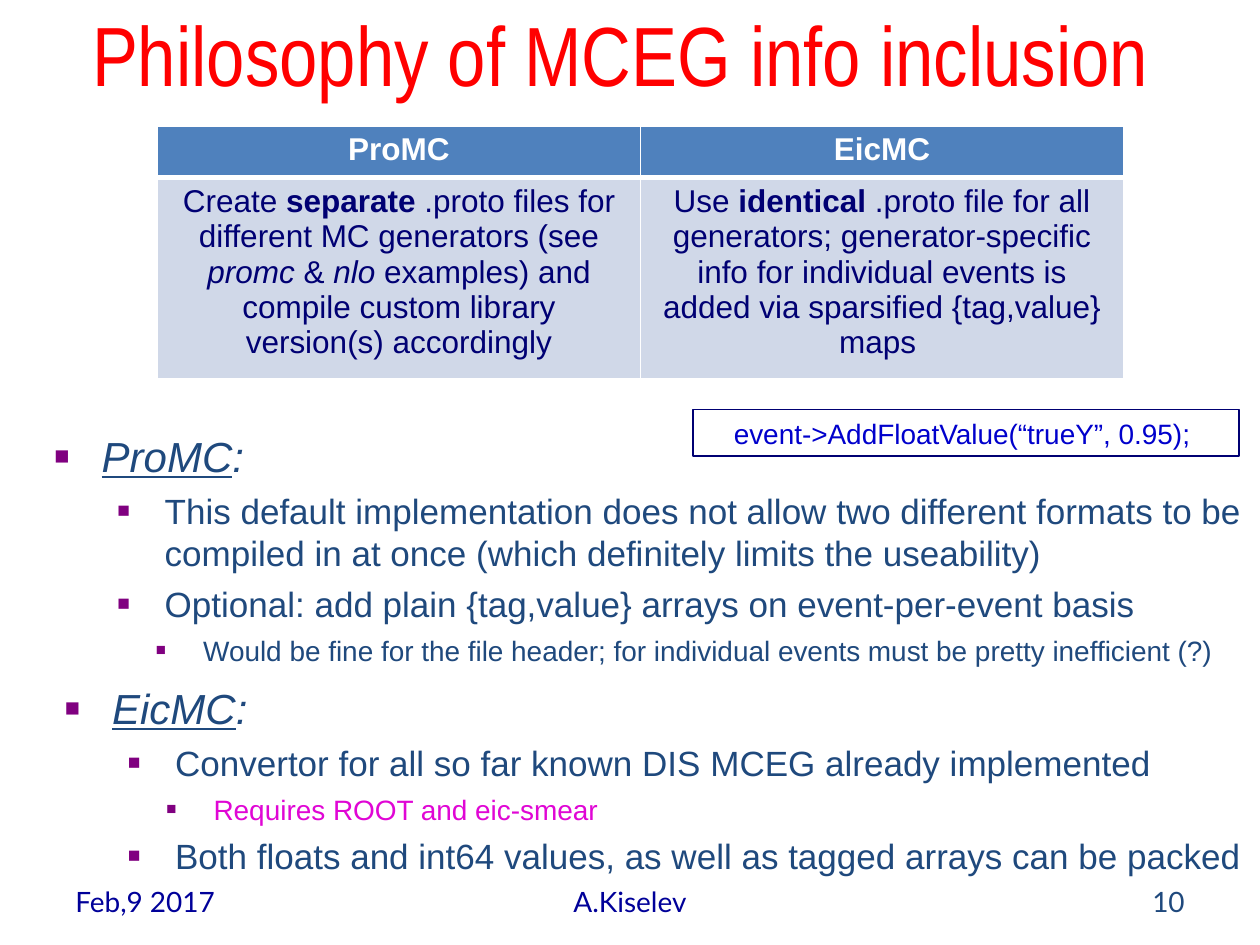
import pptx
import pptx.util
import pptx.dml.color
import pptx.enum.shapes
import pptx.enum.text
import pptx.oxml
import pptx.oxml.ns
from dataclasses import dataclass

Pt = pptx.util.Pt
ALIGN = pptx.enum.text.PP_ALIGN
ANCHOR = pptx.enum.text.MSO_ANCHOR


@dataclass(frozen=True)
class Theme:
    body_font: str = "Arial"
    title_font: str = "Arial Narrow"
    footer_font: str = "Lato"
    title: str = "FF0000"
    body: str = "1F497D"
    remark: str = "E006D5"
    bullet: str = "800080"
    footer: str = "000099"
    code: str = "0000CC"
    navy: str = "000073"
    white: str = "FFFFFF"
    header_fill: str = "4F81BD"
    cell_fill: str = "D0D8E8"
    title_size: int = 48
    table_size: int = 18
    small_size: int = 16
    level_sizes: tuple = (24, 20, 16)


theme = Theme()

# Content: a span is (text, style letters), with b bold, i italic, u underlined
TITLE = "Philosophy of MCEG info inclusion "
CODE = "event->AddFloatValue(“trueY”, 0.95); "
TABLE = [
    [[("ProMC", "b")], [("EicMC", "b")]],
    [
        [("Create ", ""), ("separate", "b"),
         (" .proto files for different MC generators (see ", ""),
         ("promc", "i"), (" & ", ""), ("nlo", "i"),
         (" examples) and compile custom library version(s) accordingly", "")],
        [("Use ", ""), ("identical", "b"),
         (" .proto file for all generators; generator-specific info for "
          "individual events is added via sparsified {tag,value} maps ", "")],
    ],
]
# Each list: left, top, width, height, then (level, colour, spans)
LISTS = [
    ((24, 240, 696, 138), [
        (0, theme.body, [("ProMC", "iu"), (":", "i")]),
        (1, theme.body, [("This default implementation does not allow two different formats "
                          "to be compiled in at once (which definitely limits the useability)", "")]),
        (1, theme.body, [("Optional: add plain {tag,value} arrays on event-per-event basis", "")]),
        (2, theme.body, [("Would be fine for the file header; for individual events must be "
                          "pretty inefficient (?)", "")]),
    ]),
    ((30, 384, 690, 126), [
        (0, theme.body, [("EicMC", "iu"), (":", "i")]),
        (1, theme.body, [("Convertor for all so far known DIS MCEG already implemented", "")]),
        (2, theme.remark, [("Requires ROOT and eic-smear", "")]),
        (1, theme.body, [("Both floats and int64 values, as well as tagged arrays can be packed", "")]),
    ]),
]
FOOTER = [
    ("Feb,9 2017", 36, 168, ALIGN.LEFT, theme.footer),
    ("A.Kiselev", 246, 228, ALIGN.CENTER, theme.footer),
    ("10", 516, 168, ALIGN.RIGHT, theme.body),
]
LEVEL_INDENTS = (27, 63, 85)
HANGING = 27
LIST_GAP = 5


def color(value):
    return pptx.dml.color.RGBColor.from_string(value)


def add_spans(para, spans, size, ink, font=theme.body_font):
    for text, style in spans:
        span = para.add_run()
        span.text = text
        span.font.name = font
        span.font.size = Pt(size)
        span.font.color.rgb = color(ink)
        span.font.bold = "b" in style
        span.font.italic = "i" in style
        span.font.underline = "u" in style


def add_box(page, frame, anchor=ANCHOR.TOP):
    box = page.shapes.add_textbox(*map(Pt, frame))
    box.text_frame.word_wrap = True
    box.text_frame.vertical_anchor = anchor
    return box.text_frame


def add_line(page, frame, text, size, ink, font, align):
    para = add_box(page, frame, ANCHOR.MIDDLE).paragraphs[0]
    para.alignment = align
    add_spans(para, [(text, "")], size, ink, font)


def add_bullet(para, level):
    props = para._p.get_or_add_pPr()
    props.set("marL", str(Pt(LEVEL_INDENTS[level])))
    props.set("indent", str(-Pt(HANGING)))
    names = pptx.oxml.ns.nsdecls("a")
    for xml in (
        f'<a:buClr {names}><a:srgbClr val="{theme.bullet}"/></a:buClr>',
        f'<a:buSzPct {names} val="60000"/>',
        f'<a:buFont {names} typeface="{theme.body_font}"/>',
        f'<a:buChar {names} char="■"/>',
    ):
        props.append(pptx.oxml.parse_xml(xml))


def add_list(page, frame, items):
    body = add_box(page, frame)
    body.margin_top = Pt(6)
    for number, (level, ink, spans) in enumerate(items):
        para = body.add_paragraph() if number else body.paragraphs[0]
        add_bullet(para, level)
        if number:
            para.space_before = Pt(LIST_GAP)
        add_spans(para, spans, theme.level_sizes[level], ink)


def set_borders(cell, widths):
    props = cell._tc.get_or_add_tcPr()
    for side, width in zip("LRTB", widths):
        props.append(pptx.oxml.parse_xml(
            f'<a:ln{side} {pptx.oxml.ns.nsdecls("a")} w="{Pt(width)}"><a:solidFill>'
            f'<a:srgbClr val="{theme.white}"/></a:solidFill></a:ln{side}>'))


def add_comparison(page):
    table = page.shapes.add_table(2, 2, Pt(90), Pt(72), Pt(552), Pt(136)).table
    for row, height in zip(table.rows, (29.5, 106.5)):
        row.height = Pt(height)
    looks = [(theme.header_fill, theme.white, (1, 1, 1, 3)),
             (theme.cell_fill, theme.navy, (1, 1, 3, 1))]
    for r, (fill, ink, widths) in enumerate(looks):
        for c, spans in enumerate(TABLE[r]):
            cell = table.cell(r, c)
            set_borders(cell, widths)
            cell.fill.solid()
            cell.fill.fore_color.rgb = color(fill)
            para = cell.text_frame.paragraphs[0]
            para.alignment = ALIGN.CENTER
            add_spans(para, spans, theme.table_size, ink)


def add_code(page):
    box = page.shapes.add_shape(pptx.enum.shapes.MSO_SHAPE.RECTANGLE,
                                Pt(396), Pt(234), Pt(312), Pt(26.7))
    box.shadow.inherit = False
    box.fill.background()
    box.line.color.rgb = color(theme.navy)
    box.line.width = Pt(0.75)
    box.text_frame.word_wrap = True
    para = box.text_frame.paragraphs[0]
    para.alignment = ALIGN.CENTER
    add_spans(para, [(CODE, "")], theme.small_size, theme.code)


def main():
    deck = pptx.Presentation()
    deck.slide_width, deck.slide_height = Pt(720), Pt(540)
    page = deck.slides.add_slide(deck.slide_layouts[6])

    # Footer and title
    for text, left, width, align, ink in FOOTER:
        add_line(page, (left, 500.5, width, 28.75), text, theme.small_size,
                 ink, theme.footer_font, align)
    add_line(page, (-12, 0, 744, 60), TITLE, theme.title_size,
             theme.title, theme.title_font, ALIGN.CENTER)

    # Comparison table, bullet lists and code line
    add_comparison(page)
    for frame, items in LISTS:
        add_list(page, frame, items)
    add_code(page)
    deck.save("out.pptx")


if __name__ == "__main__":
    main()
